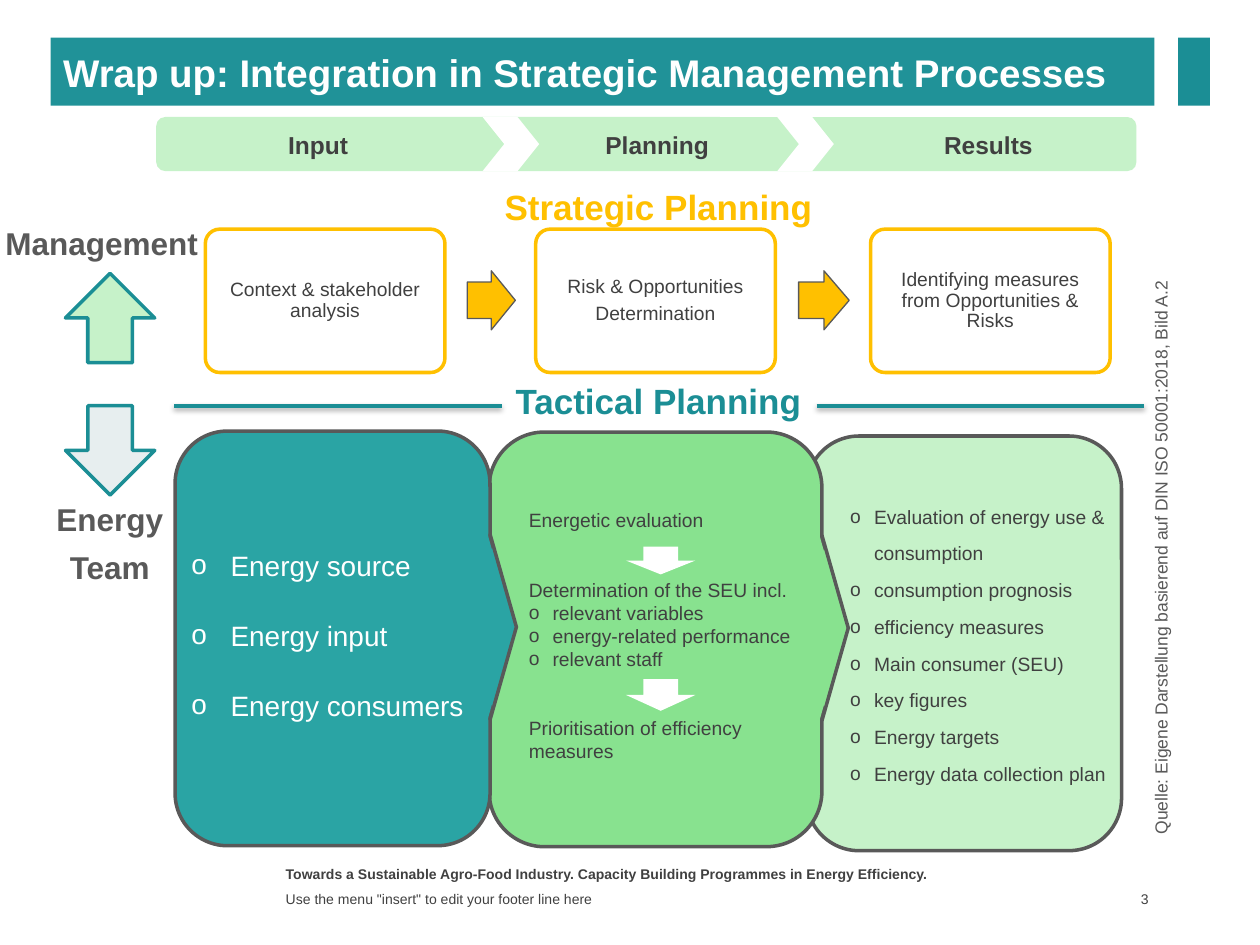
from dataclasses import dataclass
from typing import Optional

from lxml import etree
from pptx import Presentation, util as u
from pptx.dml.color import RGBColor
from pptx.enum import shapes, text
from pptx.oxml import parse_xml
from pptx.oxml.ns import nsdecls, qn

COLOURS = {
    "title": "209298", "teal": "1B8E95", "card teal": "2AA4A4",
    "green": "88E28F", "mint": "C6F2C9", "mist": "E7EEEF",
    "amber": "FFC000", "white": "FFFFFF", "grey": "595959", "ink": "404040",
}
KIND = shapes.MSO_SHAPE
ALIGN = text.PP_ALIGN
ANCHOR = text.MSO_ANCHOR


@dataclass
class Frame:
    left: float
    top: float
    width: float
    height: float

    def lengths(self) -> list:
        return [u.Cm(v) for v in (self.left, self.top, self.width, self.height)]


@dataclass
class Style:
    size: float
    colour: str = "ink"
    bold: bool = False
    align: ALIGN = ALIGN.LEFT
    anchor: ANCHOR = ANCHOR.TOP
    before: float = 0
    spacing: Optional[object] = None


@dataclass
class Line:
    words: str
    indent: float = 0
    before: Optional[float] = None


@dataclass
class Card:
    frame: Frame
    fill: str
    pointed: bool


def write(shape, lines: list[Line], style: Style) -> None:
    frame = shape.text_frame
    frame.word_wrap = True
    frame.auto_size = text.MSO_AUTO_SIZE.NONE
    frame.vertical_anchor = style.anchor
    frame.text = "\n".join(line.words for line in lines)
    for index, (para, line) in enumerate(zip(frame.paragraphs, lines)):
        if line.indent:
            properties = para._p.get_or_add_pPr()
            properties.set("marL", str(u.Cm(line.indent)))
            properties.set("indent", str(-u.Cm(line.indent)))
            etree.SubElement(properties, qn("a:buFont"), typeface="Arial")
            etree.SubElement(properties, qn("a:buChar"), char="o")
        para.alignment = style.align
        if style.spacing:
            para.line_spacing = style.spacing
        before = style.before if line.before is None else line.before
        para.space_before = u.Pt(before if index else 0)
        for span in para.runs:
            span.font.name = "Arial"
            span.font.size = u.Pt(style.size)
            span.font.bold = style.bold
            span.font.color.rgb = RGBColor.from_string(COLOURS[style.colour])


def add_text(page, frame: Frame, lines: list[Line], style: Style):
    box = page.shapes.add_textbox(*frame.lengths())
    write(box, lines, style)
    return box


def add_block(page, kind, frame: Frame, fill: str, line: Optional[str] = None,
              weight: float = 2, adjust: tuple = (), turn: float = 0):
    shape = page.shapes.add_shape(kind, *frame.lengths())
    shape.shadow.inherit = False
    shape.rotation = turn
    shape.fill.solid()
    shape.fill.fore_color.rgb = RGBColor.from_string(COLOURS[fill])
    if line:
        shape.line.color.rgb = RGBColor.from_string(COLOURS[line])
        shape.line.width = u.Pt(weight)
    else:
        shape.line.fill.background()
    for index, value in enumerate(adjust):
        shape.adjustments[index] = value
    return shape


def add_rule(page, left: float, right: float, top: float) -> None:
    rule = page.shapes.add_connector(
        shapes.MSO_CONNECTOR.STRAIGHT, u.Cm(left), u.Cm(top), u.Cm(right), u.Cm(top))
    rule.line.color.rgb = RGBColor.from_string(COLOURS["teal"])
    rule.line.width = u.Pt(2)
    rule._element.spPr.append(parse_xml(
        f'<a:effectLst {nsdecls("a")}><a:outerShdw blurRad="{u.Pt(3.1)}" '
        f'dist="{u.Pt(1.6)}" dir="5400000" rotWithShape="0"><a:srgbClr val="000000">'
        '<a:alpha val="38000"/></a:srgbClr></a:outerShdw></a:effectLst>'))


def add_card(page, card: Card) -> None:
    frame = card.frame
    add_block(page, KIND.ROUNDED_RECTANGLE, frame, card.fill, "grey")
    if not card.pointed:
        return
    base, depth = 3.73, 0.53
    left = frame.left + frame.width + (depth - base) / 2
    top = frame.top + (frame.height - depth) / 2 - 0.23
    for shift, line in ((0, "grey"), (-0.05, None)):
        add_block(page, KIND.ISOSCELES_TRIANGLE, Frame(left + shift, top, base, depth),
                  card.fill, line, turn=90)


def add_header(page) -> None:
    title = page.shapes.title
    title.left, title.top, title.width, title.height = Frame(1.02, 0.76, 22.25, 1.37).lengths()
    title.fill.solid()
    title.fill.fore_color.rgb = RGBColor.from_string(COLOURS["title"])
    write(title, [Line("Wrap up: Integration in Strategic Management Processes")],
          Style(22, "white", True, anchor=ANCHOR.MIDDLE))
    add_block(page, KIND.RECTANGLE, Frame(23.75, 0.76, 0.64, 1.37), "teal")
    add_block(page, KIND.ROUNDED_RECTANGLE, Frame(3.15, 2.36, 19.76, 1.09), "mint")
    for left in (9.73, 15.67):
        add_block(page, KIND.CHEVRON, Frame(left, 2.36, 1.14, 1.09), "white", adjust=(0.4,))
    for words, left, width in (("Input", 3.1, 6.63), ("Planning", 10.85, 4.8),
                               ("Results", 16.79, 6.27)):
        add_text(page, Frame(left, 2.49, width, 0.86), [Line(words)],
                 Style(14, bold=True, align=ALIGN.CENTER))


def add_strategy(page) -> None:
    style = Style(11, align=ALIGN.CENTER, anchor=ANCHOR.MIDDLE, before=4, spacing=0.9)
    for left, lines in (
            (4.14, ["Context & stakeholder analysis"]),
            (10.8, ["Risk & Opportunities", "Determination"]),
            (17.55, ["Identifying measures from Opportunities & Risks"])):
        step = add_block(page, KIND.ROUNDED_RECTANGLE, Frame(left, 4.62, 4.83, 2.89),
                         "white", "amber", adjust=(0.1,))
        write(step, [Line(words) for words in lines], style)
    for left, width in ((9.42, 0.97), (16.1, 1.02)):
        add_block(page, KIND.RIGHT_ARROW, Frame(left, 5.46, width, 1.19), "amber", "grey",
                  0.75, adjust=(0.62, 0.5))


def add_labels(page) -> None:
    for frame, lines, size, colour in (
            (Frame(-0.25, 4.39, 4.6, 2.21), ["Management"], 18, "grey"),
            (Frame(-0.3, 9.96, 5.03, 2.21), ["Energy", "Team"], 18, "grey"),
            (Frame(8.97, 3.61, 8.61, 2.21), ["Strategic Planning"], 20, "amber"),
            (Frame(8.97, 7.52, 8.61, 2.21), ["Tactical Planning"], 20, "teal")):
        add_text(page, frame, [Line(words) for words in lines],
                 Style(size, colour, True, ALIGN.CENTER, before=5.8))
    for top, fill, turn in ((5.51, "mint", 270), (8.18, "mist", 90)):
        add_block(page, KIND.RIGHT_ARROW, Frame(1.32, top, 1.8, 1.8), fill, "teal", turn=turn)
    for left, right in ((3.51, 10.11), (16.46, 23.06)):
        add_rule(page, left, right, 8.18)
    credit = add_text(
        page, Frame(17.65, 10.62, 11.86, 1.04),
        [Line("Quelle: Eigene Darstellung basierend auf DIN ISO 50001:2018, Bild A.2")],
        Style(10, "grey"))
    credit.rotation = 270


def add_tactics(page) -> None:
    for card in (Card(Frame(16.26, 8.79, 6.35, 8.36), "mint", False),
                 Card(Frame(9.86, 8.71, 6.71, 8.36), "green", True),
                 Card(Frame(3.53, 8.69, 6.35, 8.36), "card teal", True)):
        add_card(page, card)
    sources = ["Energy source", "Energy input", "Energy consumers"]
    add_text(page, Frame(3.61, 10.9, 6.27, 3.76), [Line(words, 0.79) for words in sources],
             Style(16, "white", before=20, spacing=u.Pt(20)))
    details = ["relevant variables", "energy-related performance", "relevant staff"]
    add_text(page, Frame(10.41, 10.13, 6.27, 5.44), [
        Line("Energetic evaluation"),
        Line("Determination of the SEU incl.", before=26.4),
        *[Line(words, 0.48) for words in details],
        Line("Prioritisation of efficiency measures", before=26.4),
    ], Style(11, spacing=u.Pt(13.2)))
    for top, height in ((11.02, 0.56), (13.69, 0.64)):
        add_block(page, KIND.DOWN_ARROW, Frame(12.62, top, 1.4, height), "white")
    results = ["Evaluation of energy use & consumption", "consumption prognosis",
               "efficiency measures", "Main consumer (SEU)", "key figures",
               "Energy targets", "Energy data collection plan"]
    add_text(page, Frame(16.89, 9.78, 5.69, 6.15), [Line(words, 0.48) for words in results],
             Style(11, spacing=u.Pt(21)))


def add_footer(page) -> None:
    add_text(page, Frame(5.51, 17.32, 13.97, 0.53), [Line(
        "Towards a Sustainable Agro-Food Industry. "
        "Capacity Building Programmes in Energy Efficiency.")], Style(8, bold=True))
    add_text(page, Frame(5.51, 17.88, 13.97, 0.48),
             [Line('Use the menu "insert" to edit your footer line here')],
             Style(8, anchor=ANCHOR.MIDDLE))
    number = add_text(page, Frame(21.84, 17.86, 1.42, 0.51), [Line("3")],
                      Style(8, align=ALIGN.RIGHT, anchor=ANCHOR.MIDDLE))
    number.text_frame.margin_right = u.Cm(0.1)


def main() -> None:
    deck = Presentation()
    deck.slide_width, deck.slide_height = u.Cm(25.4), u.Cm(19.05)
    page = deck.slides.add_slide(deck.slide_layouts[5])
    for add_part in (add_header, add_strategy, add_labels, add_tactics, add_footer):
        add_part(page)
    deck.save("out.pptx")


if __name__ == "__main__":
    main()
